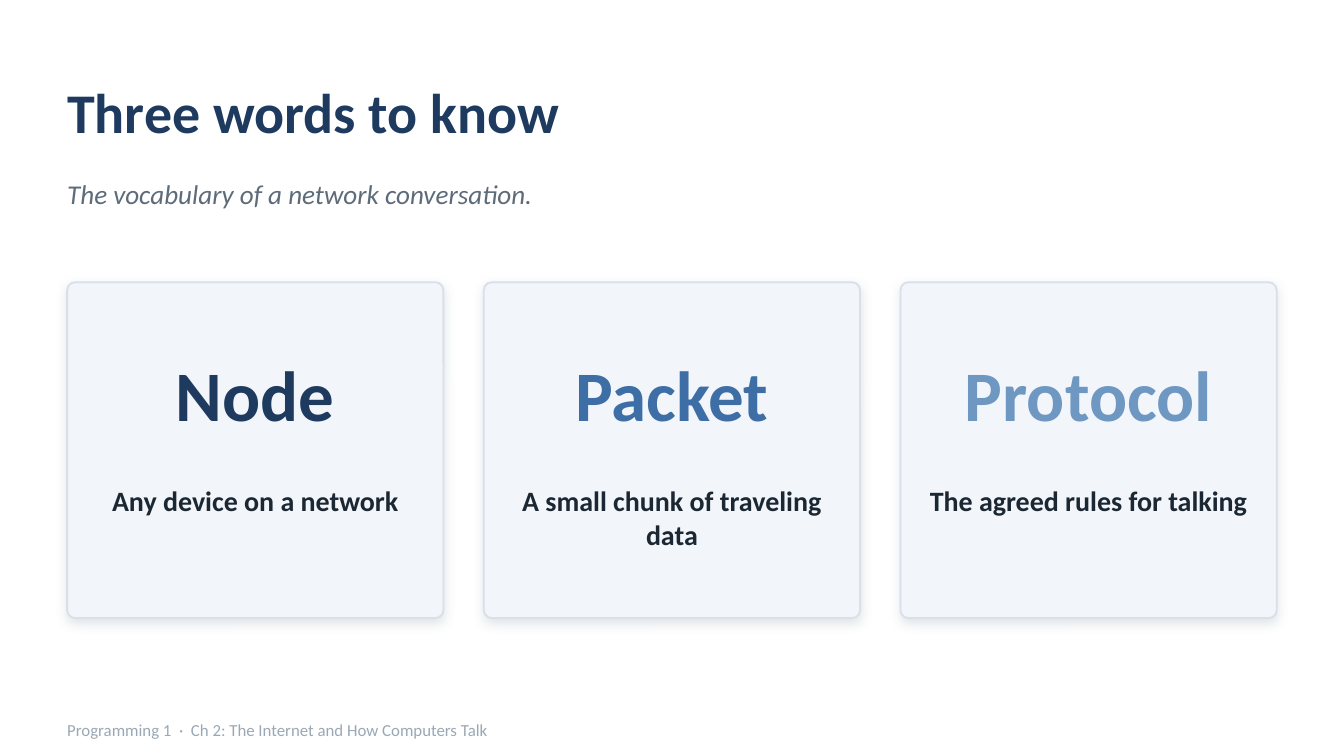
from lxml.etree import SubElement
from pptx import Presentation
from pptx.dml.color import RGBColor
from pptx.enum.shapes import MSO_SHAPE
from pptx.enum.text import MSO_ANCHOR, PP_ALIGN
from pptx.oxml.ns import qn
from pptx.util import Pt

FONT = "Calibri"
COLORS = {
    "paper": "FFFFFF",
    "navy": "1F3A5F",
    "blue": "3D6EA5",
    "sky": "6E97C2",
    "ink": "1B2733",
    "slate": "5E6B79",
    "mist": "9AA8B6",
    "card": "F2F5F9",
    "border": "D8E0E9",
}
WORDS = [
    ("Node", "Any device on a network", "navy"),
    ("Packet", "A small chunk of traveling data", "blue"),
    ("Protocol", "The agreed rules for talking", "sky"),
]


def color(name):
    return RGBColor.from_string(COLORS[name])


def place(sp, x, y, w, h):
    sp.left, sp.top, sp.width, sp.height = Pt(x), Pt(y), Pt(w), Pt(h)


def write(sp, text, size, fill, bold=False, italic=False,
          align=PP_ALIGN.LEFT, anchor=MSO_ANCHOR.MIDDLE):
    tf = sp.text_frame
    tf.word_wrap = True
    tf.vertical_anchor = anchor
    tf.margin_left = tf.margin_right = tf.margin_top = tf.margin_bottom = 0
    p = tf.paragraphs[0]
    p.alignment = align
    r = p.add_run()
    r.text = text
    r.font.name = FONT
    r.font.size = Pt(size)
    r.font.bold = bold
    r.font.italic = italic
    r.font.color.rgb = color(fill)


def add_label(s, x, y, w, h, *args, **kwargs):
    sp = s.shapes.add_textbox(Pt(x), Pt(y), Pt(w), Pt(h))
    write(sp, *args, **kwargs)


def add_soft_shadow(sp):
    sp.shadow.inherit = False
    effects = sp._element.spPr.find(qn("a:effectLst"))
    shadow = SubElement(effects, qn("a:outerShdw"), blurRad=str(Pt(6)),
                        dist=str(Pt(2)), dir="5400000", algn="bl",
                        rotWithShape="0")
    tint = SubElement(shadow, qn("a:srgbClr"), val=COLORS["mist"])
    SubElement(tint, qn("a:alpha"), val="28000")


def add_header(s, x, y, w):
    place(s.shapes.title, x, y, w, 61.2)
    write(s.shapes.title, "Three words to know", 30, "navy", bold=True)
    add_label(s, x, y + 60.5, w, 28.8,
              "The vocabulary of a network conversation.", 14.5, "slate",
              italic=True)


def add_card(s, x, y, w, h, word, meaning, accent):
    sp = s.shapes.add_shape(MSO_SHAPE.ROUNDED_RECTANGLE,
                            Pt(x), Pt(y), Pt(w), Pt(h))
    sp.adjustments[0] = 0.024
    sp.fill.solid()
    sp.fill.fore_color.rgb = color("card")
    sp.line.color.rgb = color("border")
    sp.line.width = Pt(1)
    add_soft_shadow(sp)
    add_label(s, x + 7.2, y + 25.2, w - 14.4, 68.4, word, 38, accent,
              bold=True, align=PP_ALIGN.CENTER)
    add_label(s, x + 10.8, y + 108, w - 21.6, 57.6, meaning, 15, "ink",
              bold=True, align=PP_ALIGN.CENTER, anchor=MSO_ANCHOR.TOP)


def add_cards(s, x, y, w, h, gap):
    card_w = (w - gap * (len(WORDS) - 1)) / len(WORDS)
    for i, (word, meaning, accent) in enumerate(WORDS):
        add_card(s, x + i * (card_w + gap), y, card_w, h,
                 word, meaning, accent)


def add_footer(s, x, y, w, h):
    add_label(s, x, y, w, h,
              "Programming 1  ·  Ch 2: The Internet and How Computers Talk",
              9, "mist")


def main():
    prs = Presentation()
    prs.slide_width, prs.slide_height = Pt(720), Pt(405)
    s = prs.slides.add_slide(prs.slide_layouts[5])
    s.background.fill.solid()
    s.background.fill.fore_color.rgb = color("paper")
    margin = 36
    width = 720 - 2 * margin
    add_header(s, margin, 28.8, width)
    add_cards(s, margin, 151.2, width, 180, 21.6)
    add_footer(s, margin, 381.6, 576, 18.7)
    prs.save("out.pptx")


if __name__ == "__main__":
    main()
